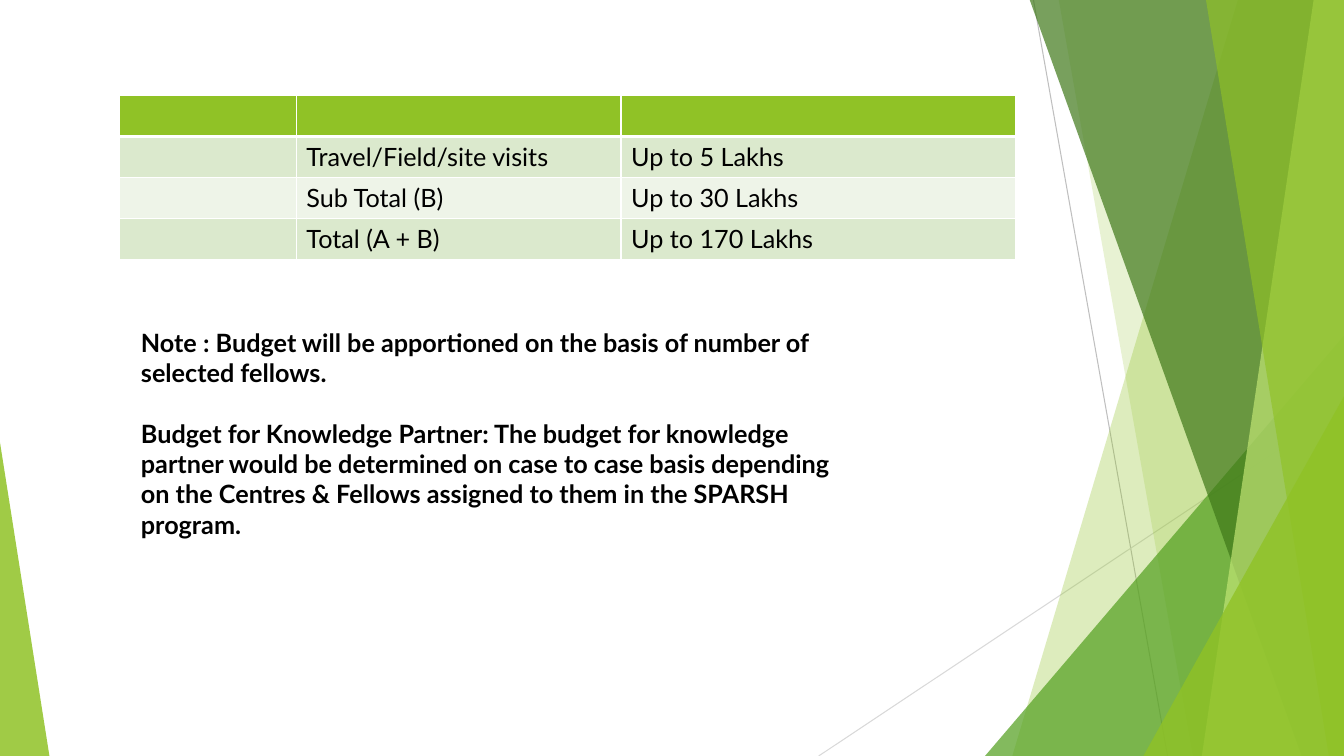
from lxml import etree
from pptx import Presentation
from pptx.dml.color import RGBColor
from pptx.enum.shapes import MSO_CONNECTOR, MSO_SHAPE
from pptx.oxml.ns import qn
from pptx.util import Inches, Pt

FONT = "Lato"
TEXT_SIZE = 18
COLORS = {
    "lime": "90C226", "green": "54A021", "forest": "3F7819", "pale": "C0E474",
    "band_dark": "DBE9CD", "band_light": "EEF4E8", "white": "FFFFFF",
    "black": "000000", "line_dark": "BFBFBF", "line_light": "D9D9D9",
}

# Content
BUDGET_ROWS = [
    ("", "", ""),
    ("", "Travel/Field/site visits", "Up to 5 Lakhs"),
    ("", "Sub Total (B)", "Up to 30 Lakhs"),
    ("", "Total (A + B)", "Up to 170 Lakhs"),
]
COLUMN_WIDTHS = (1.76, 3.22, 3.91)
ROW_HEIGHT = 0.405
NOTES = [
    "Note : Budget will be apportioned on the basis of number of selected fellows.",
    "Budget for Knowledge Partner: The budget for knowledge partner would be "
    "determined on case to case basis depending on the Centres & Fellows "
    "assigned to them in the SPARSH program.",
]

# Decoration, back to front
RIGHT, TOP, BOTTOM = 13.33, -0.01, 7.5
RAYS = [
    ((10.25, 0), (11.58, BOTTOM), "line_dark"),
    ((RIGHT, 4.03), (8.12, BOTTOM), "line_light"),
]
# Blades reach the right edge: ("blade", top x, bottom x, color, opacity %)
# Triangles: ("triangle", left, top, width, apex, color, opacity %)
FACETS = [
    ("blade", 12.28, 10.04, "lime", 30),
    ("blade", 10.5, 11.83, "lime", 20),
    ("triangle", 9.77, 3.33, 3.56, 1, "green", 72),
    ("blade", 10.21, 12.91, "forest", 70),
    ("blade", 13.03, 11.92, "pale", 70),
    ("blade", 11.96, 13.18, "lime", 65),
    ("triangle", 11.34, 3.93, 1.99, 1, "lime", 80),
    ("triangle", 0, 4.39, 0.49, 0, "lime", 85),
]


def rgb(name):
    return RGBColor.from_string(COLORS[name])


def paint(facet, color, opacity):
    facet.shadow.inherit = False
    facet.line.fill.background()
    facet.fill.solid()
    facet.fill.fore_color.rgb = rgb(color)
    tint = facet.fill._xPr.find(qn("a:solidFill"))[0]
    etree.SubElement(tint, qn("a:alpha"), val=str(opacity * 1000))


def add_ray(slide, start, end, color):
    ray = slide.shapes.add_connector(
        MSO_CONNECTOR.STRAIGHT, *(Inches(v) for v in start + end))
    ray.line.color.rgb = rgb(color)
    ray.line.width = Pt(0.75)
    etree.SubElement(ray._element.spPr, qn("a:effectLst"))


def add_blade(slide, top_x, bottom_x, color, opacity):
    builder = slide.shapes.build_freeform(Inches(top_x), Inches(TOP))
    corners = [(RIGHT, TOP), (RIGHT, BOTTOM), (bottom_x, BOTTOM)]
    builder.add_line_segments([(Inches(x), Inches(y)) for x, y in corners])
    paint(builder.convert_to_shape(), color, opacity)


def add_triangle(slide, left, top, width, apex, color, opacity):
    triangle = slide.shapes.add_shape(
        MSO_SHAPE.ISOSCELES_TRIANGLE, Inches(left), Inches(top),
        Inches(width), Inches(BOTTOM - top))
    triangle.adjustments[0] = apex
    paint(triangle, color, opacity)


def add_text(paragraph, text, bold=False):
    run = paragraph.add_run()
    run.text = text
    run.font.name = FONT
    run.font.size = Pt(TEXT_SIZE)
    run.font.bold = bold
    run.font.color.rgb = rgb("black")


def add_borders(cell, row):
    heavy = {0: "lnB", 1: "lnT"}.get(row)
    for side in ("lnL", "lnR", "lnT", "lnB"):
        border = etree.SubElement(cell._tc.get_or_add_tcPr(), qn(f"a:{side}"),
                                  w=str(Pt(3 if side == heavy else 1)))
        fill = etree.SubElement(border, qn("a:solidFill"))
        etree.SubElement(fill, qn("a:srgbClr"), val=COLORS["white"])


def add_budget(slide):
    budget = slide.shapes.add_table(
        len(BUDGET_ROWS), len(COLUMN_WIDTHS), Inches(1.18), Inches(0.95),
        Inches(sum(COLUMN_WIDTHS)), Inches(ROW_HEIGHT * len(BUDGET_ROWS))).table
    for column, width in zip(budget.columns, COLUMN_WIDTHS):
        column.width = Inches(width)
    for r, entries in enumerate(BUDGET_ROWS):
        budget.rows[r].height = Inches(ROW_HEIGHT)
        band = "lime" if r == 0 else ("band_light", "band_dark")[r % 2]
        for c, entry in enumerate(entries):
            cell = budget.cell(r, c)
            add_borders(cell, r)
            cell.fill.solid()
            cell.fill.fore_color.rgb = rgb(band)
            if entry:
                add_text(cell.text_frame.paragraphs[0], entry)


def add_notes(slide):
    frame = slide.shapes.add_textbox(
        Inches(1.3), Inches(3.2), Inches(7.17), Inches(1.92)).text_frame
    frame.word_wrap = True
    for i, note in enumerate(NOTES):
        paragraph = frame.add_paragraph() if i else frame.paragraphs[0]
        paragraph.space_before = Pt(21.6 if i else 0)
        add_text(paragraph, note, bold=True)


def main():
    deck = Presentation()
    deck.slide_width, deck.slide_height = Inches(13.33), Inches(7.5)
    slide = deck.slides.add_slide(deck.slide_layouts[6])
    for ray in RAYS:
        add_ray(slide, *ray)
    draw = {"blade": add_blade, "triangle": add_triangle}
    for kind, *facet in FACETS:
        draw[kind](slide, *facet)
    add_budget(slide)
    add_notes(slide)
    deck.save("out.pptx")


if __name__ == "__main__":
    main()
